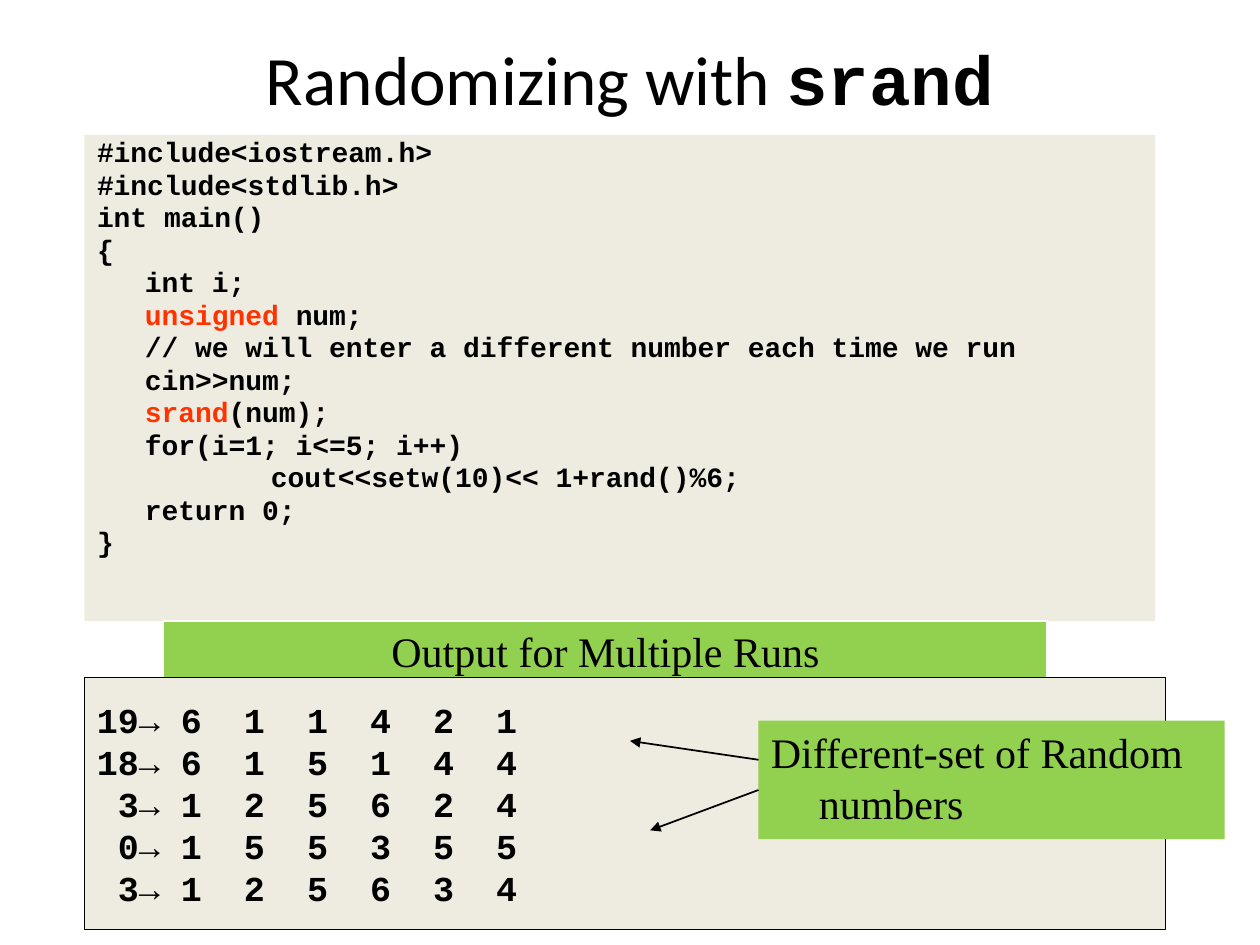
"""Builds the slide on randomizing with srand."""
from lxml import etree
from pptx import Presentation, util as u
from pptx.dml.color import RGBColor
from pptx.enum import shapes, text
from pptx.oxml import ns

WIDE, HIGH = 10, 7.5
HUE = {"ink": "000000", "red": "FF3300", "sand": "EEECE1",
       "green": "92D050", "white": "FFFFFF"}
MONO, SERIF, SANS = "Courier New", "Times New Roman", "Calibri"
LEFT, MID = text.PP_ALIGN.LEFT, text.PP_ALIGN.CENTER
CODE = [
    "#include<iostream.h>",
    "#include<stdlib.h>",
    "int main()",
    "{",
    "\tint i;",
    "|\tunsigned |num;",
    "\t// we will enter a different number each time we run",
    "\tcin>>num;",
    "|\tsrand|(num);",
    "\tfor(i=1; i<=5; i++)",
    "\t\tcout<<setw(10)<< 1+rand()%6;",
    "\treturn 0;",
    "}",
]
RUNS = [("19", "611421"), ("18", "615144"), ("3", "125624"),
        ("0", "155355"), ("3", "125634")]
HINTS = [((6.02, 6.03), (5, 5.88)), ((6.02, 6.27), (5.16, 6.59))]


def tint(name):
    return RGBColor.from_string(HUE[name])


def place(item, left, top, wide, high):
    item.left, item.top = u.Inches(left), u.Inches(top)
    item.width, item.height = u.Inches(wide), u.Inches(high)


def style(run, size, face, bold=False, hue="ink"):
    font = run.font
    font.size, font.name, font.bold = u.Pt(size), face, bold
    font.color.rgb = tint(hue)


def paint(item, fill, line=None):
    item.fill.solid()
    item.fill.fore_color.rgb = tint(fill)
    if line:
        item.line.color.rgb = tint(line)
        item.line.width = u.Pt(0.75)
    else:
        item.line.fill.background()


def hang(para):
    props = para._p.get_or_add_pPr()
    props.set("marL", str(u.Inches(0.38)))
    props.set("indent", str(u.Inches(-0.38)))
    props.set("defTabSz", str(u.Inches(1)))
    etree.SubElement(props, ns.qn("a:buNone"))


def title(item):
    place(item, 0.75, 0.25, 0.85 * WIDE, 0.74)
    item.text_frame.auto_size = text.MSO_AUTO_SIZE.NONE
    para = item.text_frame.paragraphs[0]
    para.alignment = MID
    for words, face, bold in (("Randomizing with ", SANS, False),
                              ("srand", MONO, True)):
        run = para.add_run()
        run.text = words
        style(run, 39.6, face, bold)


def code(item):
    place(item, 0.67, 1.07, 0.85 * WIDE, 3.86)
    paint(item, "sand")
    frame = item.text_frame
    frame.auto_size = text.MSO_AUTO_SIZE.NONE
    frame.text = "\n".join(line.replace("|", "") for line in CODE)
    for para, line in zip(frame.paragraphs, CODE):
        hang(para)
        para.line_spacing = 0.8
        para.text = ""
        for spot, part in enumerate(line.split("|")):
            if part:
                run = para.add_run()
                run.text = part
                style(run, 16, MONO, True, "red" if spot % 2 else "ink")


def box(group, area, words, size, face, fill, line=None, bold=False,
        align=LEFT, anchor=text.MSO_ANCHOR.MIDDLE):
    item = group.add_shape(shapes.MSO_SHAPE.RECTANGLE, 0, 0, 0, 0)
    place(item, *area)
    item.shadow.inherit = False
    paint(item, fill, line)
    frame = item.text_frame
    frame.word_wrap, frame.vertical_anchor = True, anchor
    frame.text = words
    for para in frame.paragraphs:
        para.alignment = align
        for run in para.runs:
            style(run, size, face, bold)
    return item


def arrow(group, start, end):
    line = group.add_connector(shapes.MSO_CONNECTOR.STRAIGHT,
                               *map(u.Inches, start + end))
    line.line.color.rgb, line.line.width = tint("ink"), u.Pt(1)
    tip = etree.SubElement(line.line._get_or_add_ln(), ns.qn("a:tailEnd"))
    tip.set("type", "triangle")
    etree.SubElement(line._element.spPr, ns.qn("a:effectLst"))


def main():
    deck = Presentation()
    deck.slide_width, deck.slide_height = u.Inches(WIDE), u.Inches(HIGH)
    slide = deck.slides.add_slide(deck.slide_layouts[1])
    title(slide.shapes.title)
    code(slide.placeholders[1])
    box(slide.shapes, (1.3, 4.93, 7.01, 0.47), "Output for Multiple Runs",
        24, SERIF, "green", "white", align=MID)
    rolls = "\n".join(f"{seed:>2}→ {'  '.join(dice)}" for seed, dice in RUNS)
    box(slide.shapes, (0.67, 5.38, 8.58, 2), rolls,
        20, MONO, "sand", "ink", bold=True)
    group = slide.shapes.add_group_shape().shapes
    note = box(group, (6.02, 5.72, 3.7, 0.94),
               "Different-set of Random numbers", 24, SERIF, "green",
               anchor=text.MSO_ANCHOR.TOP)
    hang(note.text_frame.paragraphs[0])
    for start, end in HINTS:
        arrow(group, start, end)
    deck.save("out.pptx")


if __name__ == "__main__":
    main()
